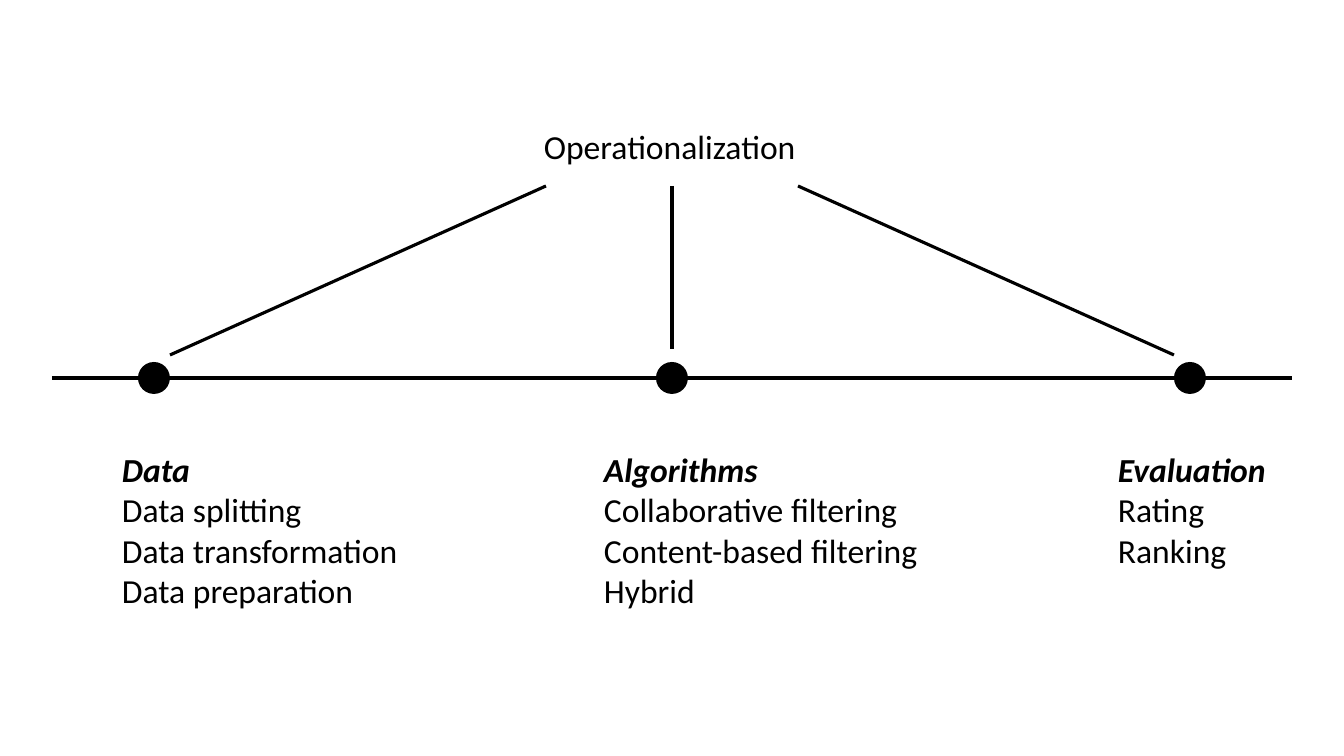
from lxml.etree import SubElement
from pptx import Presentation
from pptx.dml.color import RGBColor
from pptx.enum.shapes import MSO_CONNECTOR as Connector, MSO_SHAPE as Shape
from pptx.enum.text import MSO_AUTO_SIZE as AutoSize
from pptx.oxml.ns import qn
from pptx.util import Pt

HEADING = "Operationalization"
HEADING_BOX = (534, 121, 275, 50)

# Heading, items, then left and width of the text box
STAGES = [
    ("Data", ["Data splitting", "Data transformation", "Data preparation"], 112, 298),
    ("Algorithms", ["Collaborative filtering", "Content-based filtering", "Hybrid"], 594, 338),
    ("Evaluation", ["Rating", "Ranking"], 1108, 169),
]

INK = "000000"
FONT = "Calibri"
SLIDE_WIDTH, SLIDE_HEIGHT = 1344, 756
MIDDLE = SLIDE_WIDTH // 2
AXIS_Y = SLIDE_HEIGHT // 2
AXIS_HALF = 620
DOT_SIZE, DOT_GAP = 32, 518
SPOKE_TOP, SPOKE_SIDE_BOTTOM, SPOKE_MIDDLE_BOTTOM = 186, 355, 349
SPOKE_INNER, SPOKE_OUTER = 126, 502
STAGE_TOP, LINE_HEIGHT, BOX_PADDING = 444, 40, 10


def px(length):
    return round(length * 914400 / 100.8)


def color(hex_code):
    return RGBColor.from_string(hex_code)


def add_line(x1, y1, x2, y2):
    line = page.shapes.add_connector(Connector.STRAIGHT, px(x1), px(y1), px(x2), px(y2))
    line.line.color.rgb = color(INK)
    line.line.width = Pt(2.25)
    SubElement(line._element.spPr, qn("a:effectLst"))


def add_dot(center_x):
    dot = page.shapes.add_shape(
        Shape.OVAL, px(center_x - DOT_SIZE / 2), px(AXIS_Y - DOT_SIZE / 2), px(DOT_SIZE), px(DOT_SIZE))
    dot.shadow.inherit = False
    dot.fill.solid()
    dot.fill.fore_color.rgb = color(INK)
    dot.line.fill.background()


def add_text(lines, left, top, width, height, wrap):
    """Add a text box with one paragraph per line and return its paragraphs."""
    box = page.shapes.add_textbox(px(left), px(top), px(width), px(height))
    frame = box.text_frame
    frame.word_wrap = wrap
    frame.auto_size = AutoSize.SHAPE_TO_FIT_TEXT
    frame.text = "\n".join(lines)
    for para in frame.paragraphs:
        para.font.name = FONT
        para.font.size = Pt(24)
        para.font.color.rgb = color(INK)
    return frame.paragraphs


deck = Presentation()
deck.slide_width, deck.slide_height = px(SLIDE_WIDTH), px(SLIDE_HEIGHT)
page = deck.slides.add_slide(deck.slide_layouts[6])

add_line(MIDDLE - AXIS_HALF, AXIS_Y, MIDDLE + AXIS_HALF, AXIS_Y)

for side, (name, items, left, width) in zip((-1, 0, 1), STAGES):
    add_dot(MIDDLE + side * DOT_GAP)
    bottom = SPOKE_SIDE_BOTTOM if side else SPOKE_MIDDLE_BOTTOM
    add_line(MIDDLE + side * SPOKE_INNER, SPOKE_TOP, MIDDLE + side * SPOKE_OUTER, bottom)
    lines = [name, *items]
    height = len(lines) * LINE_HEIGHT + BOX_PADDING
    title = add_text(lines, left, STAGE_TOP, width, height, wrap=False)[0]
    title.font.bold = title.font.italic = True

add_text([HEADING], *HEADING_BOX, wrap=True)

deck.save("out.pptx")
